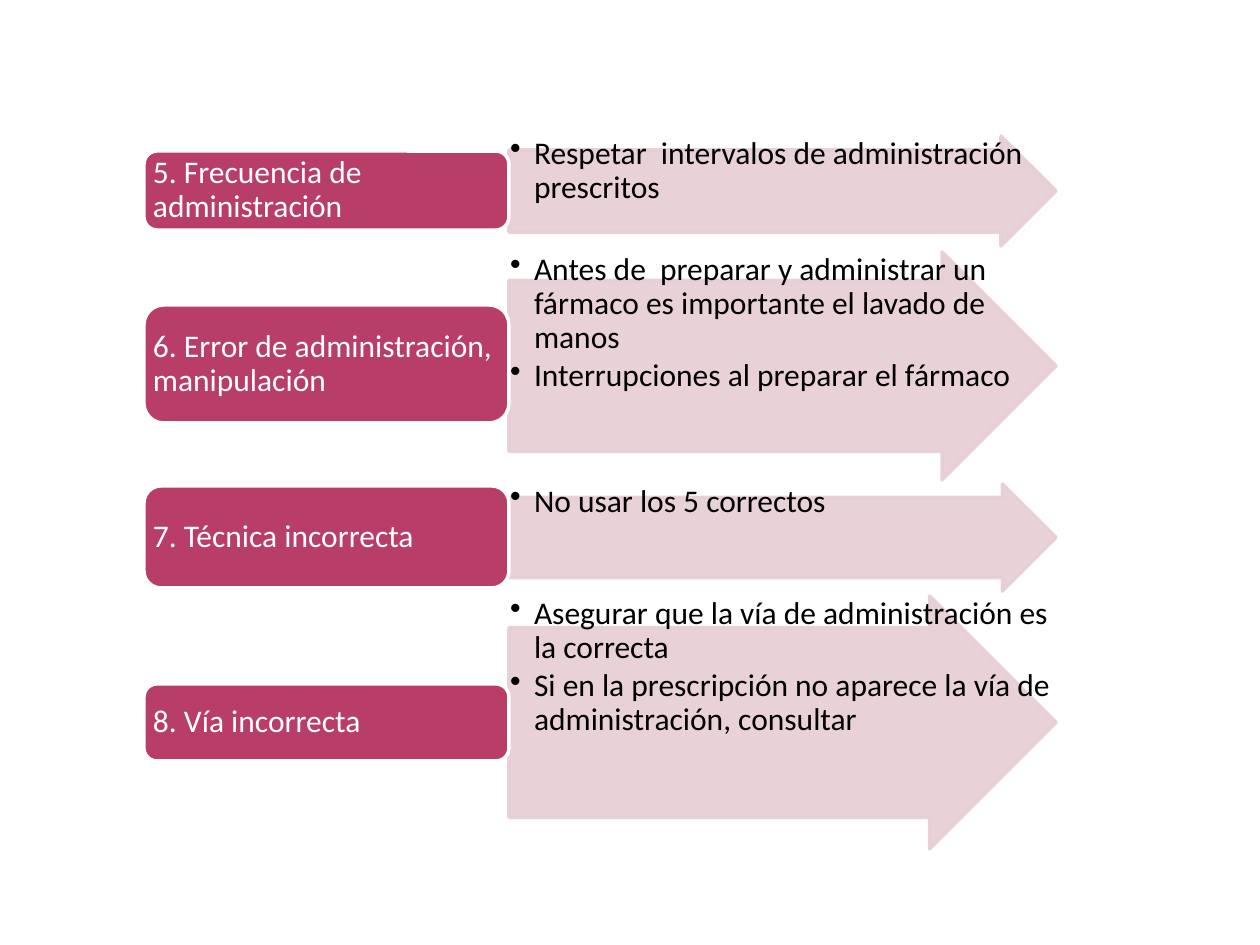
import pptx
import pptx.dml.color
import pptx.enum.shapes
import pptx.enum.text
import pptx.oxml.ns
import pptx.util
from lxml import etree

PX = 914400 / 126
THEME = {
    "font": "Calibri",
    "size": 18,
    "line_width": 2,
    "label_fill": "B83D68",
    "label_text": "FFFFFF",
    "label_line": "FFFFFF",
    "arrow": "E6CED4",
    "arrow_text": "000000",
}
ARROW_OPACITY = 90
LABEL_LEFT, LABEL_WIDTH = 144, 365
ARROW_LEFT, ARROW_WIDTH = 509, 547
BULLET_INDENT = 24

# arrow top, arrow height, label top, label height, label, bullets
ROWS = [
    (136, 110, 151, 79, "5. Frecuencia de administración",
     ["Respetar  intervalos de administración prescritos"]),
    (252, 228, 305, 118, "6. Error de administración, manipulación",
     ["Antes de  preparar y administrar un fármaco es importante el lavado de manos",
      "Interrupciones al preparar el fármaco"]),
    (484, 107, 486, 102, "7. Técnica incorrecta",
     ["No usar los 5 correctos"]),
    (596, 253, 684, 77, "8. Vía incorrecta",
     ["Asegurar que la vía de administración es la correcta",
      "Si en la prescripción no aparece la vía de administración, consultar"]),
]


def add_block(kind, box, fill, line):
    shape = slide.shapes.add_shape(kind, *box)
    shape.shadow.inherit = False
    shape.fill.solid()
    shape.fill.fore_color.rgb = pptx.dml.color.RGBColor.from_string(fill)
    shape.line.color.rgb = pptx.dml.color.RGBColor.from_string(line)
    shape.line.width = pptx.util.Pt(THEME["line_width"])
    return shape


def add_text(box, lines, color, anchor, margins, bulleted):
    """Lay a text box over a block; margins are (horizontal, vertical) px."""
    text_frame = slide.shapes.add_textbox(*box).text_frame
    text_frame.word_wrap = True
    text_frame.vertical_anchor = anchor
    text_frame.margin_left = text_frame.margin_right = round(margins[0] * PX)
    text_frame.margin_top = text_frame.margin_bottom = round(margins[1] * PX)
    text_frame.text = "\n".join(lines)
    for paragraph in text_frame.paragraphs:
        paragraph.line_spacing = 0.9
        if bulleted:
            paragraph.space_after = pptx.util.Pt(2.7)
            properties = paragraph._p.get_or_add_pPr()
            properties.set("marL", str(round(BULLET_INDENT * PX)))
            properties.set("indent", str(-round(BULLET_INDENT * PX)))
            bullet = etree.SubElement(properties, pptx.oxml.ns.qn("a:buChar"))
            bullet.set("char", "•")
        for run in paragraph.runs:
            run.font.name = THEME["font"]
            run.font.size = pptx.util.Pt(THEME["size"])
            run.font.color.rgb = pptx.dml.color.RGBColor.from_string(color)


presentation = pptx.Presentation()
presentation.slide_width = pptx.util.Inches(10)
presentation.slide_height = pptx.util.Inches(7.5)
slide = presentation.slides.add_slide(presentation.slide_layouts[6])

for arrow_top, arrow_height, label_top, label_height, label, bullets in ROWS:
    arrow_box = [round(length * PX) for length in
                 (ARROW_LEFT, arrow_top, ARROW_WIDTH, arrow_height)]
    label_box = [round(length * PX) for length in
                 (LABEL_LEFT, label_top, LABEL_WIDTH, label_height)]

    arrow = add_block(pptx.enum.shapes.MSO_SHAPE.RIGHT_ARROW, arrow_box,
                      THEME["arrow"], THEME["arrow"])
    arrow.adjustments[0] = 0.75
    arrow.adjustments[1] = 0.5
    for color in arrow._element.spPr.iter(pptx.oxml.ns.qn("a:srgbClr")):
        alpha = etree.SubElement(color, pptx.oxml.ns.qn("a:alpha"))
        alpha.set("val", str(ARROW_OPACITY * 1000))
    add_text(arrow_box, bullets, THEME["arrow_text"],
             pptx.enum.text.MSO_ANCHOR.TOP, (1, 1), True)

    add_block(pptx.enum.shapes.MSO_SHAPE.ROUNDED_RECTANGLE, label_box,
              THEME["label_fill"], THEME["label_line"])
    add_text(label_box, [label], THEME["label_text"],
             pptx.enum.text.MSO_ANCHOR.MIDDLE, (9, 5), False)

presentation.save("out.pptx")
